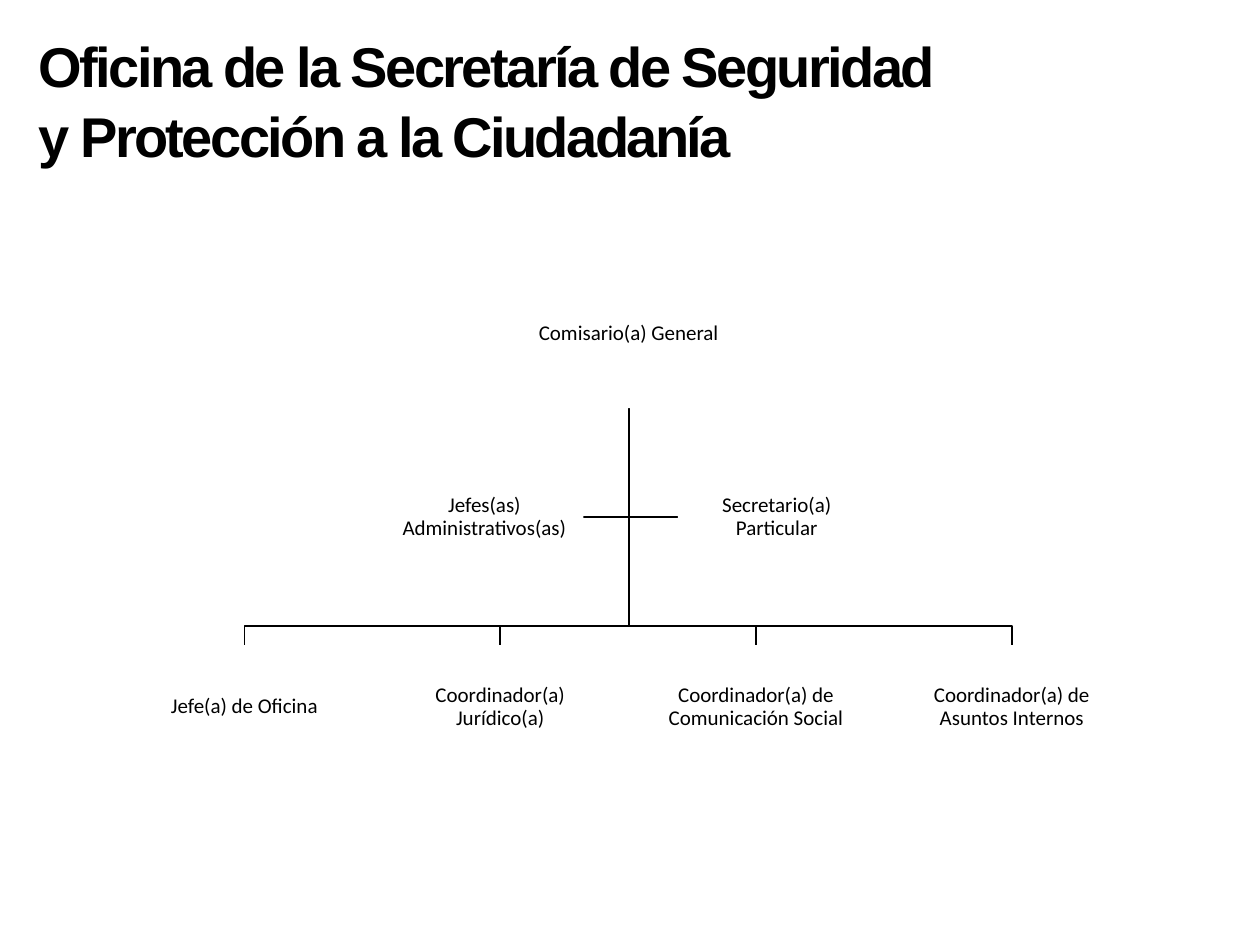
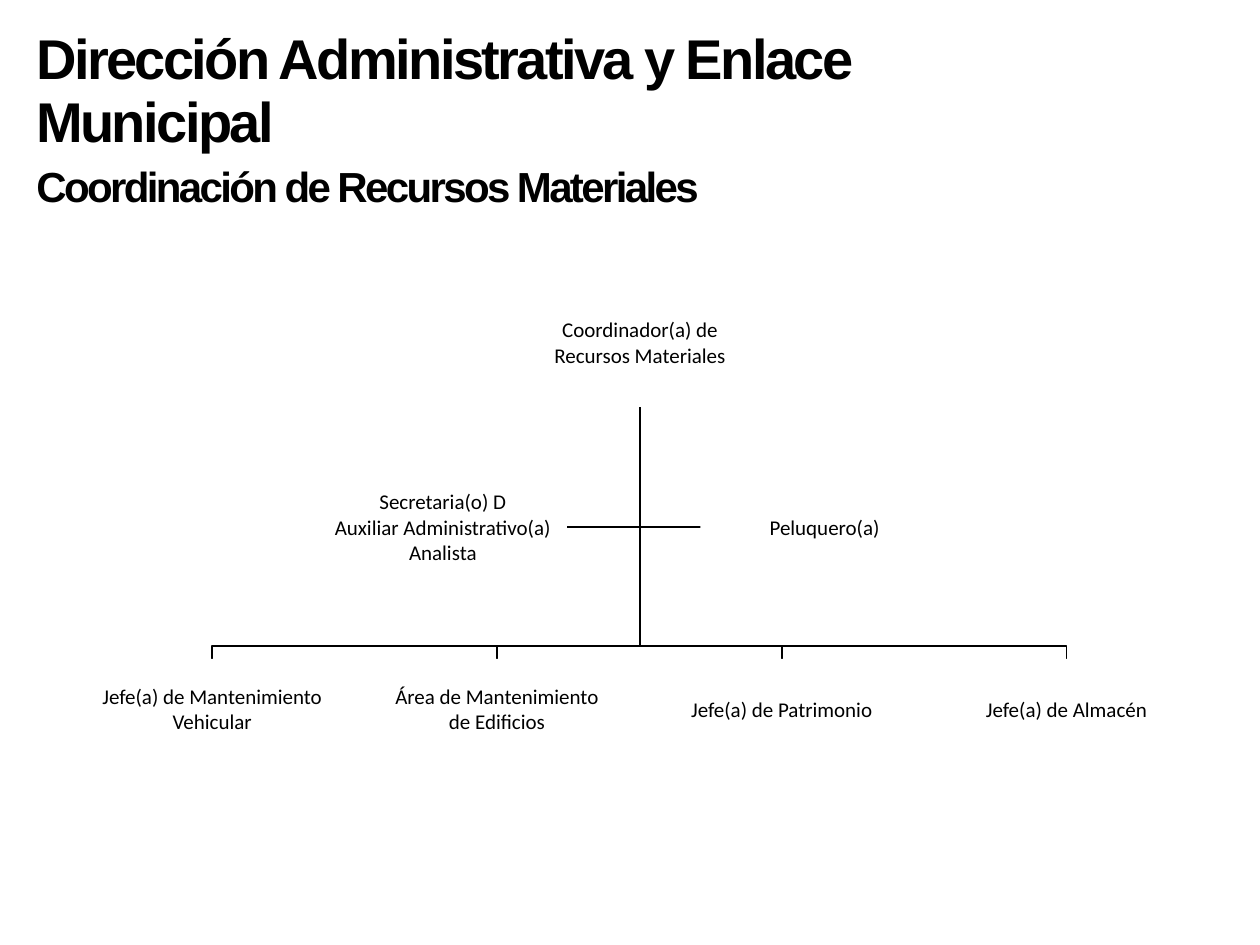
from dataclasses import dataclass

from pptx import Presentation
from pptx import util as u
from pptx.dml.color import RGBColor
from pptx.enum import shapes, text

BLACK = "000000"
WHITE = "FFFFFF"
TITLE_FONT = "Arial"
BODY_FONT = "Calibri"


@dataclass(frozen=True)
class Box:
    left: float
    top: float
    width: float
    height: float

    @property
    def center_x(self) -> float:
        return self.left + self.width / 2

    @property
    def center_y(self) -> float:
        return self.top + self.height / 2

    def lengths(self) -> list:
        return [u.Inches(v) for v in (self.left, self.top, self.width, self.height)]


@dataclass(frozen=True)
class TitleLine:
    wording: str
    size: int
    spacing: float


@dataclass(frozen=True)
class Post:
    wording: str
    box: Box


@dataclass(frozen=True)
class OrgChart:
    title_box: Box
    title: list[TitleLine]
    head: Post
    assistants: tuple[Post, Post]  # left and right of the trunk
    reports: list[Post]
    bar_y: float
    line_spacing: float


def color(value: str) -> RGBColor:
    return RGBColor.from_string(value)


def report_row(first: Box, step: float, wordings: list[str]) -> list[Post]:
    """Place the posts of the bottom row at equal steps."""
    return [
        Post(wording, Box(first.left + i * step, first.top, first.width, first.height))
        for i, wording in enumerate(wordings)
    ]


def draw_title(slide, box: Box, lines: list[TitleLine]) -> None:
    frame = slide.shapes.add_textbox(*box.lengths()).text_frame
    frame.word_wrap = True
    frame.margin_top = u.Inches(0.07)
    frame.text = "\n".join(line.wording for line in lines)
    for paragraph, line in zip(frame.paragraphs, lines):
        paragraph.line_spacing = line.spacing
        for run in paragraph.runs:
            font = run.font
            font.name, font.size, font.bold = TITLE_FONT, u.Pt(line.size), True
            font.color.rgb = color(BLACK)
            # Tight letter spacing, in hundredths of a point
            run._r.get_or_add_rPr().set("spc", "-150")


def draw_branch(slide, points: list[tuple[float, float]]) -> None:
    start, *rest = [(u.Inches(x), u.Inches(y)) for x, y in points]
    builder = slide.shapes.build_freeform(*start)
    builder.add_line_segments(rest, close=False)
    branch = builder.convert_to_shape()
    branch.shadow.inherit = False
    branch.fill.background()
    branch.line.color.rgb = color(BLACK)
    branch.line.width = u.Pt(1)


def draw_post(slide, post: Post, line_spacing: float) -> None:
    shape = slide.shapes.add_shape(shapes.MSO_SHAPE.RECTANGLE, *post.box.lengths())
    shape.shadow.inherit = False
    shape.fill.solid()
    shape.fill.fore_color.rgb = color(WHITE)
    shape.line.fill.background()
    frame = shape.text_frame
    frame.word_wrap = True
    frame.vertical_anchor = text.MSO_ANCHOR.MIDDLE
    frame.margin_left = frame.margin_right = u.Inches(0.01)
    frame.margin_top = frame.margin_bottom = u.Inches(0.01)
    frame.text = post.wording
    for paragraph in frame.paragraphs:
        paragraph.alignment = text.PP_ALIGN.CENTER
        paragraph.line_spacing = line_spacing
        for run in paragraph.runs:
            run.font.name, run.font.size = BODY_FONT, u.Pt(12)
            run.font.color.rgb = color(BLACK)


def draw_org_chart(presentation, chart: OrgChart) -> None:
    slide = presentation.slides.add_slide(presentation.slide_layouts[6])
    draw_title(slide, chart.title_box, chart.title)

    # Branches run from the foot of the head post
    head = chart.head.box
    trunk_x = head.center_x
    start = (trunk_x, head.top + head.height)
    left, right = (post.box for post in chart.assistants)
    for edge, box in ((left.left + left.width, left), (right.left, right)):
        draw_branch(slide, [start, (trunk_x, box.center_y), (edge, box.center_y)])
    for post in chart.reports:
        x = post.box.center_x
        draw_branch(slide, [start, (trunk_x, chart.bar_y), (x, chart.bar_y), (x, post.box.top)])

    # Posts
    for post in (chart.head, *chart.reports, *chart.assistants):
        draw_post(slide, post, chart.line_spacing)


SECRETARY_OFFICE = OrgChart(
    title_box=Box(0.21, 0.15, 7.35, 1.18),
    title=[TitleLine("Oficina de la Secretaría de Seguridad y Protección a la Ciudadanía", 32, 1.05)],
    head=Post("Comisario(a) General", Box(3.81, 2.06, 2.36, 1.18)),
    assistants=(
        Post("Jefes(as) Administrativos(as)", Box(3.06, 3.67, 1.57, 0.87)),
        Post("Secretario(a)\nParticular", Box(5.38, 3.67, 1.57, 0.87)),
    ),
    reports=report_row(Box(1.08, 5.12, 1.72, 0.98), 2.03, [
        "Jefe(a) de Oficina",
        "Coordinador(a)\nJurídico(a)",
        "Coordinador(a) de Comunicación Social",
        "Coordinador(a) de Asuntos Internos",
    ]),
    bar_y=4.97,
    line_spacing=0.9,
)

MATERIAL_RESOURCES = OrgChart(
    title_box=Box(0.19, 0.16, 7.46, 1.47),
    title=[
        TitleLine("Dirección Administrativa y Enlace Municipal", 32, 0.94),
        TitleLine("Coordinación de Recursos Materiales", 24, 1.1),
    ],
    head=Post("Coordinador(a) de\nRecursos Materiales", Box(3.75, 2.2, 2.66, 1.03)),
    assistants=(
        Post("Secretaria(o) D\nAuxiliar Administrativo(a)\nAnalista", Box(2.53, 3.55, 1.97, 1.26)),
        Post("Peluquero(a)", Box(5.56, 3.55, 1.97, 1.26)),
    ),
    reports=report_row(Box(0.65, 5.23, 2.07, 0.79), 2.26, [
        "Jefe(a) de Mantenimiento\nVehicular",
        "Área de Mantenimiento\nde Edificios",
        "Jefe(a) de Patrimonio",
        "Jefe(a) de Almacén",
    ]),
    bar_y=5.13,
    line_spacing=1.0,
)


def main() -> None:
    presentation = Presentation()
    presentation.slide_width = u.Inches(10)
    presentation.slide_height = u.Inches(7.5)
    for chart in (SECRETARY_OFFICE, MATERIAL_RESOURCES):
        draw_org_chart(presentation, chart)
    presentation.save("out.pptx")


if __name__ == "__main__":
    main()
